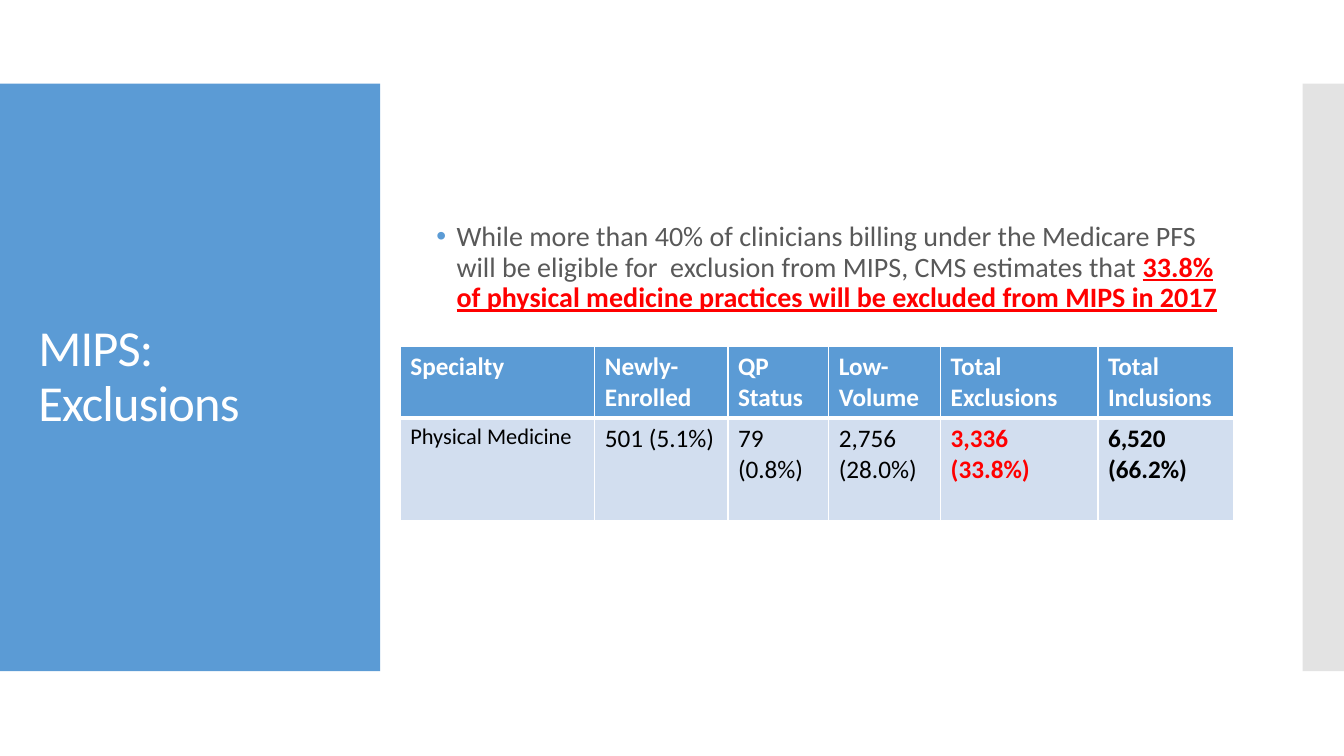
from dataclasses import dataclass

from pptx import Presentation
from pptx.dml.color import RGBColor
from pptx.enum.shapes import MSO_SHAPE
from pptx.enum.text import MSO_ANCHOR, MSO_AUTO_SIZE, PP_ALIGN
from pptx.oxml import parse_xml
from pptx.oxml.ns import nsdecls
from pptx.util import Inches, Pt

BLUE = RGBColor(0x5B, 0x9B, 0xD5)
PALE_BLUE = RGBColor(0xD2, 0xDE, 0xEF)
GREY = RGBColor(0xC8, 0xC8, 0xC8)
TEXT_GREY = RGBColor(0x59, 0x59, 0x59)
RED = RGBColor(0xFF, 0x00, 0x00)
BLACK = RGBColor(0x00, 0x00, 0x00)
WHITE = RGBColor(0xFF, 0xFF, 0xFF)
FONT = "Calibri"

COLUMN_WIDTHS = (1.93, 1.32, 1, 1.11, 1.56, 1.35)
ROW_HEIGHTS = (0.71, 1.01)


@dataclass(frozen=True)
class Panel:
    left: float
    width: float
    color: RGBColor
    opacity: int = 100


@dataclass(frozen=True)
class Entry:
    text: str
    size: int = 18
    color: RGBColor = BLACK
    bold: bool = False


PANELS = (Panel(0, 3.77, BLUE), Panel(12.92, 0.42, GREY, opacity=50))
HEADINGS = ("Specialty", "Newly- Enrolled", "QP Status", "Low-Volume",
            "Total Exclusions", "Total Inclusions")
HEADER = tuple(Entry(heading, color=WHITE, bold=True) for heading in HEADINGS)
PHYSICAL_MEDICINE = (
    Entry("Physical Medicine", size=16),
    Entry("501 (5.1%)"),
    Entry("79\n(0.8%)"),
    Entry("2,756 (28.0%)"),
    Entry("3,336 (33.8%)", color=RED, bold=True),
    Entry("6,520\n(66.2%)", bold=True),
)


def add_text(paragraph, text: str, *, size: float, color: RGBColor,
             bold: bool = False, underline: bool = False,
             tracking: float = 0) -> None:
    """Append text to the paragraph, turning newlines into line breaks."""
    for index, line in enumerate(text.split("\n")):
        if index:
            paragraph.add_line_break()
        run = paragraph.add_run()
        run.text = line
        font = run.font
        font.name, font.size = FONT, Pt(size)
        font.bold, font.underline = bold, underline
        font.color.rgb = color
        if tracking:
            font._element.set("spc", str(round(tracking * 100)))


def add_panel(slide, panel: Panel) -> None:
    """Draw a side band behind the title."""
    band = slide.shapes.add_shape(
        MSO_SHAPE.RECTANGLE, Inches(panel.left), Inches(0.83),
        Inches(panel.width), Inches(5.83))
    band.shadow.inherit = False
    band.line.fill.background()
    band.fill.solid()
    band.fill.fore_color.rgb = panel.color
    if panel.opacity < 100:
        color = band.element.spPr.find(".//{*}solidFill/{*}srgbClr")
        color.append(parse_xml(
            f'<a:alpha {nsdecls("a")} val="{panel.opacity * 1000}"/>'))
    slide.shapes.title.element.addprevious(band.element)


def format_title(slide) -> None:
    title = slide.shapes.title
    title.left, title.top = Inches(0.28), Inches(1.23)
    title.width, title.height = Inches(3.22), Inches(5.03)
    frame = title.text_frame
    frame.word_wrap = True
    frame.auto_size = MSO_AUTO_SIZE.NONE
    frame.vertical_anchor = MSO_ANCHOR.MIDDLE
    paragraph = frame.paragraphs[0]
    paragraph.alignment = PP_ALIGN.LEFT
    paragraph.line_spacing = 0.9
    add_text(paragraph, "MIPS: Exclusions", size=36, color=WHITE, tracking=-0.6)


def add_statement(slide) -> None:
    box = slide.shapes.add_textbox(
        Inches(4.23), Inches(2.16), Inches(8), Inches(1.02))
    frame = box.text_frame
    frame.word_wrap = True
    paragraph = frame.paragraphs[0]
    properties = paragraph._p.get_or_add_pPr()
    properties.set("marL", str(Inches(0.2)))
    properties.set("indent", str(Inches(-0.2)))
    for bullet in (f'<a:buClr {nsdecls("a")}><a:srgbClr val="{BLUE}"/></a:buClr>',
                   f'<a:buFont {nsdecls("a")} typeface="Arial"/>',
                   f'<a:buChar {nsdecls("a")} char="•"/>'):
        properties.append(parse_xml(bullet))
    paragraph.line_spacing = 0.9
    add_text(paragraph,
             "While more than 40% of clinicians billing under the Medicare PFS "
             "will be eligible for  exclusion from MIPS, CMS estimates that ",
             size=20, color=TEXT_GREY)
    add_text(paragraph,
             "33.8% of physical medicine practices will be excluded from MIPS in 2017",
             size=20, color=RED, bold=True, underline=True)


def set_borders(cell, **widths: float) -> None:
    """Give the cell white borders with widths in points, keyed by side."""
    properties = cell._tc.get_or_add_tcPr()
    for side, width in widths.items():
        properties.append(parse_xml(
            f'<a:ln{side} {nsdecls("a")} w="{Pt(width)}"><a:solidFill>'
            f'<a:srgbClr val="{WHITE}"/></a:solidFill></a:ln{side}>'))


def add_exclusions_table(slide) -> None:
    table = slide.shapes.add_table(
        2, len(COLUMN_WIDTHS), Inches(3.97), Inches(3.44),
        Inches(sum(COLUMN_WIDTHS)), Inches(sum(ROW_HEIGHTS))).table
    for column, width in zip(table.columns, COLUMN_WIDTHS):
        column.width = Inches(width)
    for row, height in zip(table.rows, ROW_HEIGHTS):
        row.height = Inches(height)

    for row, entries in enumerate((HEADER, PHYSICAL_MEDICINE)):
        is_header = row == 0
        for column, entry in enumerate(entries):
            cell = table.cell(row, column)
            set_borders(cell, L=1, R=1, T=1 if is_header else 3,
                        B=3 if is_header else 1)
            cell.fill.solid()
            cell.fill.fore_color.rgb = BLUE if is_header else PALE_BLUE
            add_text(cell.text_frame.paragraphs[0], entry.text, size=entry.size,
                     color=entry.color, bold=entry.bold)


def main() -> None:
    presentation = Presentation()
    presentation.slide_width = Inches(13.33)
    presentation.slide_height = Inches(7.5)
    slide = presentation.slides.add_slide(presentation.slide_layouts[5])
    for panel in PANELS:
        add_panel(slide, panel)
    format_title(slide)
    add_statement(slide)
    add_exclusions_table(slide)
    presentation.save("out.pptx")


if __name__ == "__main__":
    main()
